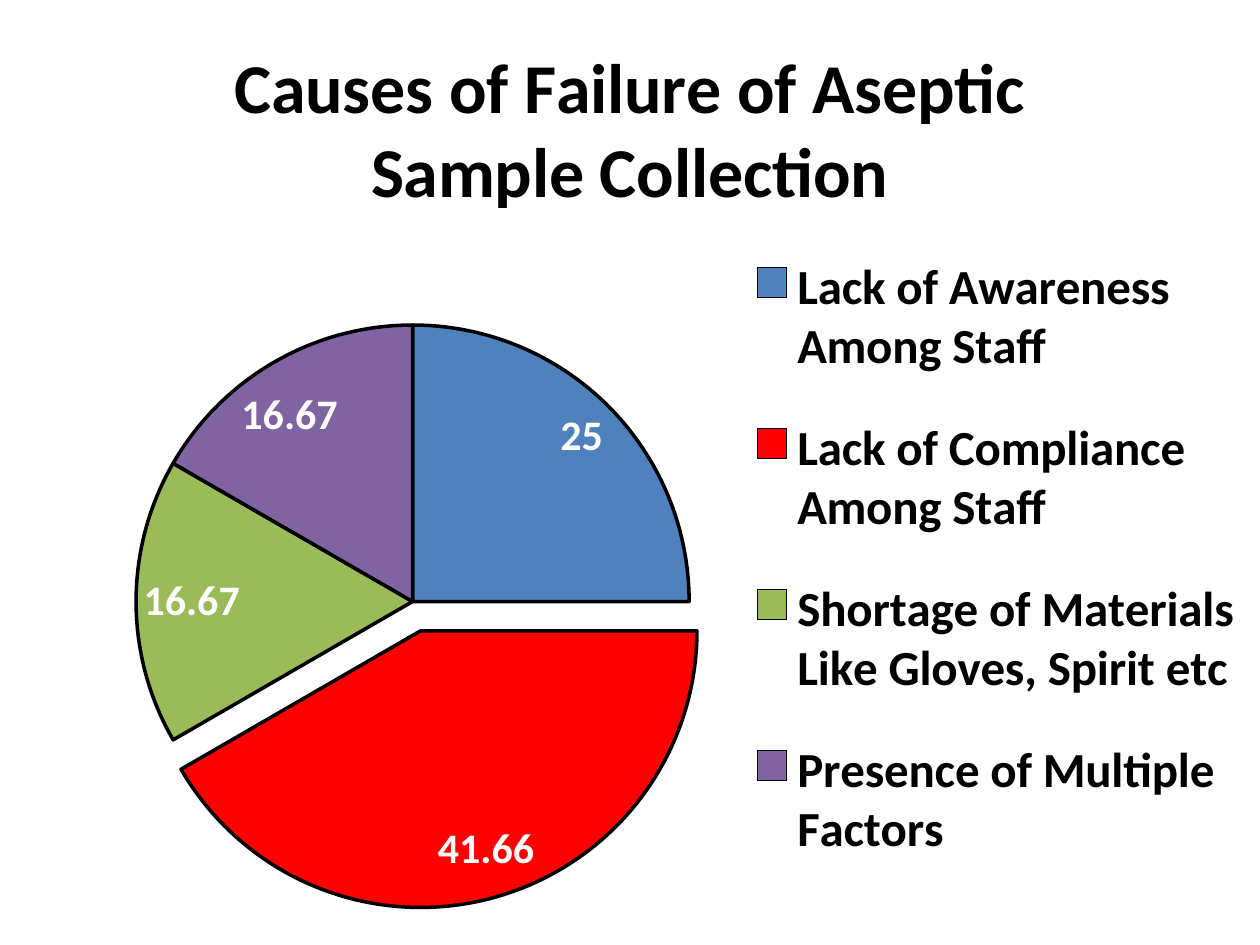
from lxml import etree
from pptx import Presentation
from pptx.chart.data import CategoryChartData
from pptx.dml.color import RGBColor
from pptx.enum.chart import XL_CHART_TYPE, XL_LABEL_POSITION, XL_LEGEND_POSITION
from pptx.oxml.ns import qn
from pptx.util import Inches, Pt

PIE = XL_CHART_TYPE.PIE
INSIDE_END = XL_LABEL_POSITION.INSIDE_END
RIGHT = XL_LEGEND_POSITION.RIGHT

TITLE = "Causes of Failure of Aseptic Sample Collection"
CAUSES = [
    ("Lack of Awareness Among Staff ", 25, "4F81BD"),
    ("Lack of Compliance Among Staff ", 41.66, "FF0000"),
    ("Shortage of Materials Like Gloves, Spirit etc ", 16.67, "9BBB59"),
    ("Presence of Multiple Factors ", 16.67, "8064A2"),
]
EXPLODED_SLICE = 1
EXPLOSION_PERCENT = 11
LABEL_SHIFTS = {1: (0.35, -0.12), 3: (-0.29, 0.17)}
LABEL_FONT = {"size": 24, "hex_color": "FFFFFF"}


def color(hex_string):
    return RGBColor.from_string(hex_string)


def format_font(font, size, bold=True, hex_color="000000"):
    font.name = "Calibri"
    font.size = Pt(size)
    font.bold = bold
    font.color.rgb = color(hex_color)


def write_text(frame, text, **font_format):
    frame.text = text
    for para in frame.paragraphs:
        for span in para.runs:
            format_font(span.font, **font_format)


def set_layout(element, index, box, lengths, target=None, edge=True):
    for old_layout in element.findall(qn("c:layout")):
        element.remove(old_layout)
    layout = etree.Element(qn("c:layout"))
    manual = etree.SubElement(layout, qn("c:manualLayout"))
    if target:
        etree.SubElement(manual, qn("c:layoutTarget"), val=target)
    if edge:
        for mode in ("xMode", "yMode"):
            etree.SubElement(manual, qn(f"c:{mode}"), val="edge")
    for name, length, whole in zip("xywh", lengths, box[2:] * 2):
        etree.SubElement(manual, qn(f"c:{name}"), val=str(Inches(length) / whole))
    element.insert(index, layout)


def style_slices(series):
    for index, (_, _, fill_color) in enumerate(CAUSES):
        slice_format = series.points[index].format
        slice_format.fill.solid()
        slice_format.fill.fore_color.rgb = color(fill_color)
        slice_format.line.color.rgb = color("000000")
        slice_format.line.width = Pt(2)
    point = series._element.findall(qn("c:dPt"))[EXPLODED_SLICE]
    explosion = etree.Element(qn("c:explosion"), val=str(EXPLOSION_PERCENT))
    point.find(qn("c:spPr")).addprevious(explosion)


def style_labels(series, box):
    labels = series.data_labels
    labels.show_value = True
    labels.show_percentage = False
    labels.position = INSIDE_END
    format_font(labels.font, **LABEL_FONT)
    for index in LABEL_SHIFTS:
        label = series.points[index].data_label
        label.position = INSIDE_END
        format_font(label.font, **LABEL_FONT)
    for element in series._element.iter(qn("c:dLbl")):
        index = int(element.find(qn("c:idx")).get("val"))
        set_layout(element, 1, box, LABEL_SHIFTS[index], edge=False)


def add_causes_chart(page, box):
    data = CategoryChartData()
    data.categories = [name for name, _, _ in CAUSES]
    data.add_series("Series 1", [value for _, value, _ in CAUSES])
    chart = page.shapes.add_chart(PIE, *box, data).chart
    format_font(chart.font, size=10, bold=False)

    chart.has_title = True
    write_text(chart.chart_title.text_frame, TITLE, size=40)

    chart.has_legend = True
    chart.legend.position = RIGHT
    chart.legend.include_in_layout = False
    format_font(chart.legend.font, size=28)

    plot = chart.plots[0]
    plot.vary_by_categories = True
    style_slices(plot.series[0])
    style_labels(plot.series[0], box)

    body = chart.element.find(qn("c:chart"))
    set_layout(body.find(qn("c:title")), 1, box, (1.76, 0.21))
    set_layout(body.find(qn("c:plotArea")), 0, box, (1.08, 2.58, 4.39, 4.39), target="inner")
    set_layout(body.find(qn("c:legend")), 1, box, (5.92, 1.71, 4, 5.45))


def main():
    deck = Presentation()
    deck.slide_width = Inches(10)
    deck.slide_height = Inches(7.5)
    page = deck.slides.add_slide(deck.slide_layouts[6])
    add_causes_chart(page, (Inches(0), Inches(0), deck.slide_width, deck.slide_height))
    deck.save("out.pptx")


if __name__ == "__main__":
    main()
